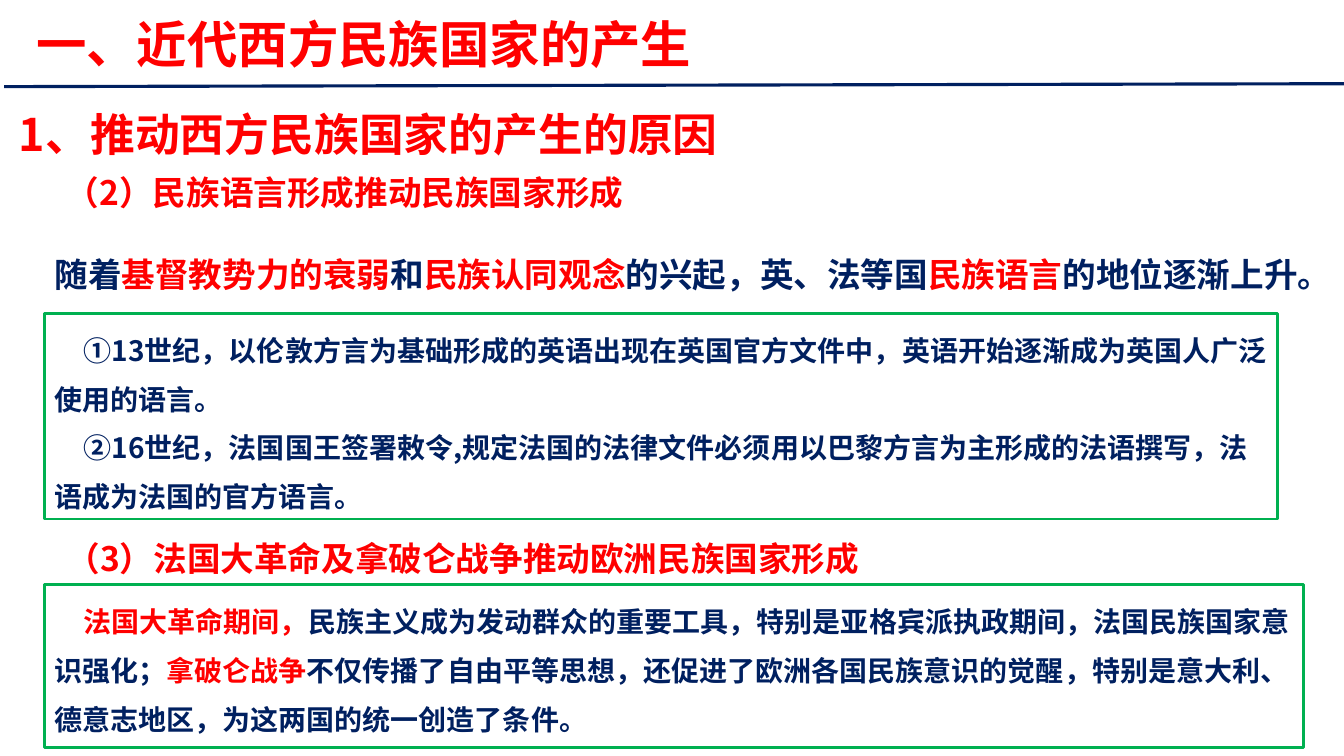
from dataclasses import dataclass

from pptx import Presentation
from pptx import util as u
from pptx.dml.color import RGBColor
from pptx.enum import shapes, text
from pptx.oxml import parse_xml
from pptx.oxml.ns import nsdecls, qn


@dataclass(frozen=True)
class Theme:
    red: str = "FF0000"
    navy: str = "002060"
    green: str = "00B050"
    heading_font: str = "Noto Sans CJK JP"
    body_font: str = "Noto Sans CJK SC"
    title: int = 36
    section: int = 32
    point: int = 24
    detail: int = 20
    first_indent: int = 21
    rule_width: float = 2.25
    frame_width: float = 2


THEME = Theme()


def color(value):
    return RGBColor.from_string(value)


def add_run(para, words, size, font, ink):
    span = para.add_run()
    span.text = words
    span.font.size = u.Pt(size)
    span.font.bold = True
    span.font.name = font
    span.font.color.rgb = color(ink)
    east_asian = parse_xml(f'<a:ea {nsdecls("a")} typeface="{font}"/>')
    span.font._element.find(qn("a:latin")).addnext(east_asian)


def write(shape, paragraphs, size, font=THEME.body_font, spacing=1.0,
          indent=0, align=text.PP_ALIGN.LEFT, wrap=True):
    """Fill a shape with paragraphs, each a list of (words, colour) runs."""
    frame = shape.text_frame
    frame.word_wrap = wrap
    frame.vertical_anchor = text.MSO_ANCHOR.TOP
    for number, runs in enumerate(paragraphs):
        para = frame.add_paragraph() if number else frame.paragraphs[0]
        para.alignment = align
        para.line_spacing = u.Pt(1.2 * size * spacing)
        para._p.get_or_add_pPr().set("indent", str(u.Pt(indent)))
        for words, ink in runs:
            add_run(para, words, size, font, ink)


def add_text(page, box):
    return page.shapes.add_textbox(*map(u.Pt, box))


def add_heading(page, box, words, size, wrap=True):
    write(add_text(page, box), [[(words, THEME.red)]], size,
          THEME.heading_font, wrap=wrap)


def add_point(page, box, words):
    write(add_text(page, box), [[(words, THEME.red)]], THEME.point,
          indent=THEME.first_indent, align=text.PP_ALIGN.JUSTIFY)


def add_statement(page, box, runs):
    write(add_text(page, box), [runs], THEME.point, spacing=1.5,
          indent=THEME.first_indent)


def add_framed_detail(page, box, paragraphs):
    frame = page.shapes.add_shape(shapes.MSO_SHAPE.RECTANGLE, *map(u.Pt, box))
    frame.shadow.inherit = False
    frame.fill.background()
    frame.line.color.rgb = color(THEME.green)
    frame.line.width = u.Pt(THEME.frame_width)
    write(frame, paragraphs, THEME.detail, spacing=1.45,
          indent=THEME.first_indent)


def add_title_rule(page, start, end):
    rule = page.shapes.add_connector(
        shapes.MSO_CONNECTOR.STRAIGHT, *map(u.Pt, start + end))
    rule.line.color.rgb = color(THEME.navy)
    rule.line.width = u.Pt(THEME.rule_width)
    rule._element.spPr.append(parse_xml(f'<a:effectLst {nsdecls("a")}/>'))


def build_lesson_page(deck):
    page = deck.slides.add_slide(deck.slide_layouts[6])
    red, navy = THEME.red, THEME.navy
    add_title_rule(page, (2.9, 61.9), (960.5, 59.8))
    add_heading(page, (18.7, 5.8, 489, 51), "一、近代西方民族国家的产生",
                THEME.title, wrap=False)
    add_heading(page, (6.5, 72.7, 525.6, 46), "1、推动西方民族国家的产生的原因",
                THEME.section)

    add_point(page, (18.9, 119.5, 595.4, 36), "（2）民族语言形成推动民族国家形成")
    add_statement(page, (10.8, 163.4, 941.8, 51), [
        ("随着", navy), ("基督教势力的衰弱", red), ("和", navy),
        ("民族认同观念", red), ("的兴起，英、法等国", navy),
        ("民族语言", red), ("的地位逐渐上升。", navy)])
    add_framed_detail(page, (31.7, 223.9, 880.6, 146.9), [
        [("①13世纪，以伦敦方言为基础形成的英语出现在英国官方文件中，"
          "英语开始逐渐成为英国人广泛使用的语言。", navy)],
        [("②16世纪，法国国王签署敕令,规定法国的法律文件必须用以巴黎方言为主"
          "形成的法语撰写，法语成为法国的官方语言。", navy)]])

    add_point(page, (19.4, 380.9, 789.8, 36), "（3）法国大革命及拿破仑战争推动欧洲民族国家形成")
    add_framed_detail(page, (31.7, 417.6, 899.3, 116.6), [[
        ("法国大革命期间，", red),
        ("民族主义成为发动群众的重要工具，特别是亚格宾派执政期间，"
         "法国民族国家意识强化；", navy),
        ("拿破仑战争", red),
        ("不仅传播了自由平等思想，还促进了欧洲各国民族意识的觉醒，"
         "特别是意大利、德意志地区，为这两国的统一创造了条件。", navy)]])


def main():
    deck = Presentation()
    deck.slide_width, deck.slide_height = u.Pt(960), u.Pt(540)
    build_lesson_page(deck)
    deck.save("out.pptx")


if __name__ == "__main__":
    main()
